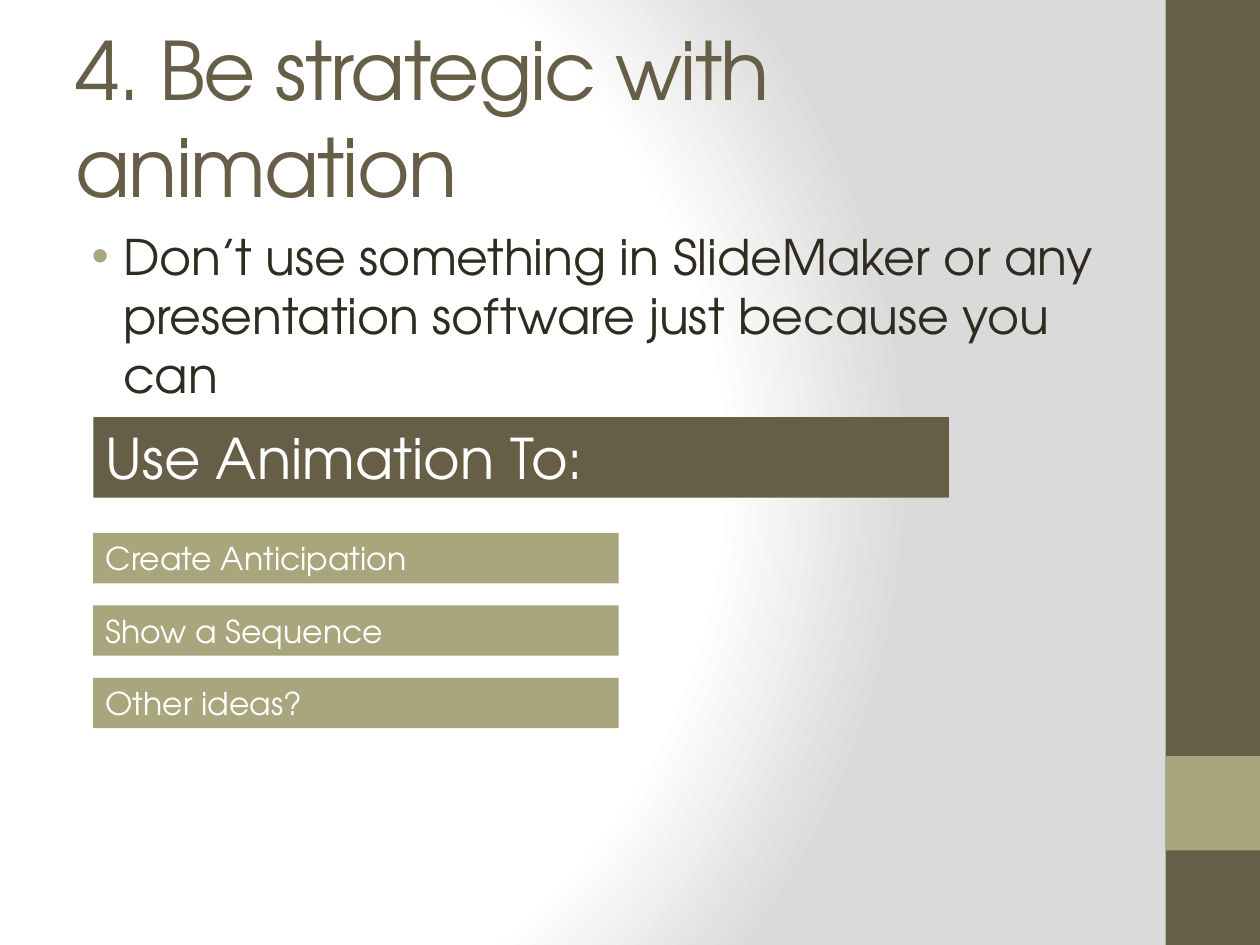
"""Builds the slide on being strategic with animation."""
from pptx import Presentation
from pptx.dml.color import RGBColor
from pptx.enum.shapes import MSO_SHAPE as SHAPE
from pptx.enum.text import MSO_ANCHOR as ANCHOR, MSO_AUTO_SIZE as FIT, PP_ALIGN as ALIGN
from pptx.oxml import parse_xml
from pptx.oxml.ns import nsdecls
from pptx.util import Inches, Pt

BROWN = RGBColor(0x67, 0x5E, 0x47)
OLIVE = RGBColor(0xA9, 0xA5, 0x7C)
INK = RGBColor(0x2F, 0x2B, 0x20)
WHITE = RGBColor(0xFF, 0xFF, 0xFF)
SILVER = RGBColor(0xDA, 0xDA, 0xDA)
FONT = "TeX Gyre Adventor"

prs = Presentation()
prs.slide_width, prs.slide_height = Inches(10), Inches(7.5)
COL, ROW = prs.slide_width / 100, prs.slide_height / 100
s = prs.slides.add_slide(prs.slide_layouts[5])


def write(sp, text, size, color, anchor):
    tf = sp.text_frame
    frame = {"word_wrap": True, "auto_size": FIT.NONE, "vertical_anchor": anchor}
    for name, value in frame.items():
        setattr(tf, name, value)
    p = tf.paragraphs[0]
    p.alignment = ALIGN.LEFT
    r = p.add_run()
    r.text = text
    for name, value in {"size": Pt(size), "name": FONT}.items():
        setattr(r.font, name, value)
    r.font.color.rgb = color
    return p, r


def block(left, top, width, height, color):
    sp = s.shapes.add_shape(SHAPE.RECTANGLE, int(left * COL), int(top * ROW),
                            int(width * COL), int(height * ROW))
    sp.shadow.inherit = False
    sp.fill.solid()
    sp.fill.fore_color.rgb = color
    sp.line.fill.background()
    return sp


s.background.fill.gradient()
grad = s.background.fill._xPr.gradFill
stops = "".join(f'<a:gs pos="{pos * 1000}"><a:srgbClr val="{color}"/></a:gs>'
                for pos, color in ((0, WHITE), (75, WHITE), (100, SILVER)))
grad.getparent().replace(grad, parse_xml(
    f'<a:gradFill {nsdecls("a")} rotWithShape="1"><a:gsLst>{stops}</a:gsLst>'
    '<a:path path="circle"><a:fillToRect l="20000" t="50000" r="100000" b="50000"/>'
    '</a:path></a:gradFill>'))

block(92.5, 0, 7.5, 100, BROWN)
block(92.5, 80, 7.5, 10, OLIVE)

title = s.shapes.title
place = {"left": 5 * COL, "top": 4 * ROW, "width": 83.3 * COL, "height": 16.67 * ROW}
for name, value in place.items():
    setattr(title, name, int(value))
p, r = write(title, "4. Be strategic with animation", 46, BROWN, ANCHOR.MIDDLE)
r.font._element.set("spc", "-100")

body = s.shapes.add_textbox(int(5 * COL), int(23.33 * ROW), int(83.3 * COL), int(18.27 * ROW))
p, r = write(body, "Don’t use something in SlideMaker or any presentation software "
             "just because you can", 28, INK, ANCHOR.TOP)
p.space_before = Pt(5.6)
pPr = p._p.get_or_add_pPr()
for name, value in {"marL": Inches(0.38), "indent": Inches(-0.25)}.items():
    pPr.set(name, str(value))
for xml in (f'<a:buClr {nsdecls("a")}><a:srgbClr val="{OLIVE}"/></a:buClr>',
            f'<a:buFont {nsdecls("a")} typeface="Arial"/>',
            f'<a:buChar {nsdecls("a")} char="•"/>'):
    pPr.append(parse_xml(xml))

write(block(7.4, 44.13, 67.9, 8.53, BROWN), "Use Animation To:", 32, WHITE, ANCHOR.TOP)
for i, idea in enumerate(("Create Anticipation", "Show a Sequence", "Other ideas?")):
    write(block(7.4, 56.4 + 7.67 * i, 41.7, 5.33, OLIVE), idea, 18, WHITE, ANCHOR.TOP)

prs.save("out.pptx")
